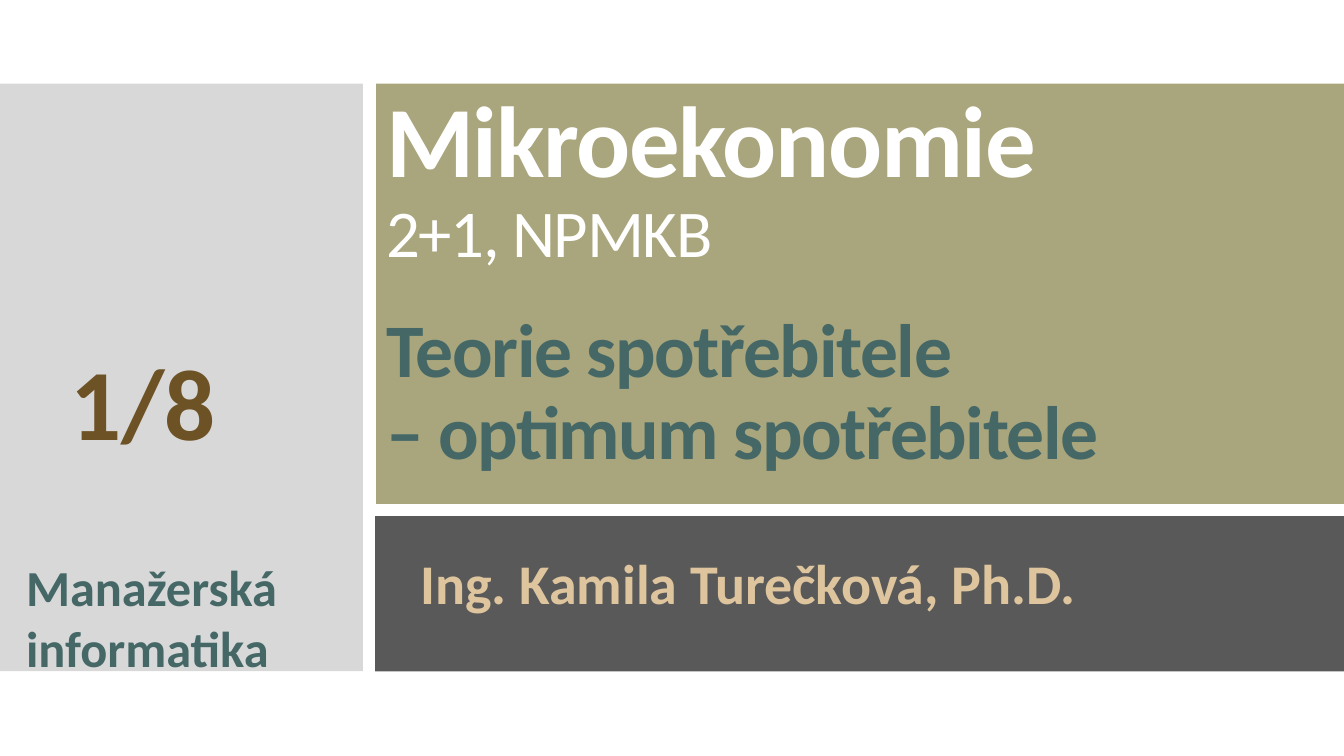
import pptx
import pptx.dml.color
import pptx.enum.shapes
import pptx.enum.text
import pptx.oxml
import pptx.oxml.ns
import pptx.util
from lxml import etree

Inches = pptx.util.Inches
Pt = pptx.util.Pt
RGBColor = pptx.dml.color.RGBColor
Anchor = pptx.enum.text.MSO_ANCHOR

WHITE = RGBColor(0xFF, 0xFF, 0xFF)
LIGHT_GREY = RGBColor(0xC8, 0xC8, 0xC8)
DARK_GREY = RGBColor(0x59, 0x59, 0x59)
OLIVE = RGBColor(0xA9, 0xA5, 0x7C)
TEAL = RGBColor(0x45, 0x68, 0x67)
SAND = RGBColor(0xDE, 0xC5, 0x9E)
BROWN = RGBColor(0x6D, 0x52, 0x25)


class CoverSlide:
    font_name = "Calibri"

    def __init__(self, presentation):
        self.slide = presentation.slides.add_slide(presentation.slide_layouts[0])
        self.slide.background.fill.solid()
        self.slide.background.fill.fore_color.rgb = WHITE

    def panel(self, left, top, width, height, color, opacity=100):
        panel = self.slide.shapes.add_shape(
            pptx.enum.shapes.MSO_SHAPE.RECTANGLE,
            Inches(left), Inches(top), Inches(width), Inches(height))
        panel.shadow.inherit = False
        panel.line.fill.background()
        panel.fill.solid()
        panel.fill.fore_color.rgb = color
        if opacity < 100:
            tint = panel.fill._xPr.find(".//" + pptx.oxml.ns.qn("a:srgbClr"))
            alpha = etree.SubElement(tint, pptx.oxml.ns.qn("a:alpha"))
            alpha.set("val", str(opacity * 1000))

    def set_lines(self, holder, box, lines, anchor=Anchor.TOP, spacing=0.9, tracking=0):
        holder.left, holder.top, holder.width, holder.height = map(Inches, box)
        frame = holder.text_frame
        frame.word_wrap = True
        frame.auto_size = pptx.enum.text.MSO_AUTO_SIZE.NONE
        frame.vertical_anchor = anchor
        for index, (text, size, color, bold, space_before) in enumerate(lines):
            paragraph = frame.add_paragraph() if index else frame.paragraphs[0]
            run = paragraph.add_run()
            run.text = text
            if tracking:
                run._r.get_or_add_rPr().set("spc", str(tracking))
            paragraph.alignment = pptx.enum.text.PP_ALIGN.LEFT
            paragraph.line_spacing = spacing
            paragraph.space_before = Pt(space_before)
            paragraph.font.name = self.font_name
            paragraph.font.size = Pt(size)
            paragraph.font.bold = bold
            paragraph.font.color.rgb = color

    def title(self, box, lines):
        self.set_lines(self.slide.shapes.title, box, lines, Anchor.BOTTOM, tracking=-100)

    def subtitle(self, box, lines):
        self.set_lines(self.slide.placeholders[1], box, lines)

    def label(self, box, lines, spacing):
        holder = self.slide.shapes.add_textbox(*map(Inches, box))
        self.set_lines(holder, box, lines, spacing=spacing)

    def send_panels_back(self):
        tree = self.slide.shapes._spTree
        for holder in list(self.slide.placeholders):
            tree.append(holder._element)


def main():
    presentation = pptx.Presentation()
    presentation.slide_width = Inches(13.33)
    presentation.slide_height = Inches(7.5)

    cover = CoverSlide(presentation)
    cover.panel(0, 0.83, 3.6, 5.83, LIGHT_GREY, opacity=70)
    cover.panel(3.73, 0.83, 9.6, 4.17, OLIVE)
    cover.panel(3.72, 5.12, 9.61, 1.54, DARK_GREY)
    cover.send_panels_back()

    cover.title((3.73, 1.42, 9.6, 3.35), [
        ("Mikroekonomie", 72, WHITE, True, 0),
        ("2+1, NPMKB", 47.7, WHITE, False, 0),
        ("Teorie spotřebitele", 54, TEAL, True, 29),
        ("– optimum spotřebitele", 54, TEAL, True, 0),
    ])
    cover.subtitle((4.07, 5.47, 7.86, 0.84), [
        ("Ing. Kamila Turečková, Ph.D.", 40, SAND, True, 0),
    ])
    cover.label((0.6, 3.55, 2.63, 2.06), [("1/8", 72, BROWN, True, 0)], spacing=0.8)
    cover.label((0.16, 5.47, 3.07, 1.31),
                [("Manažerská informatika", 36, TEAL, True, 0)], spacing=1.0)

    presentation.save("out.pptx")


if __name__ == "__main__":
    main()
